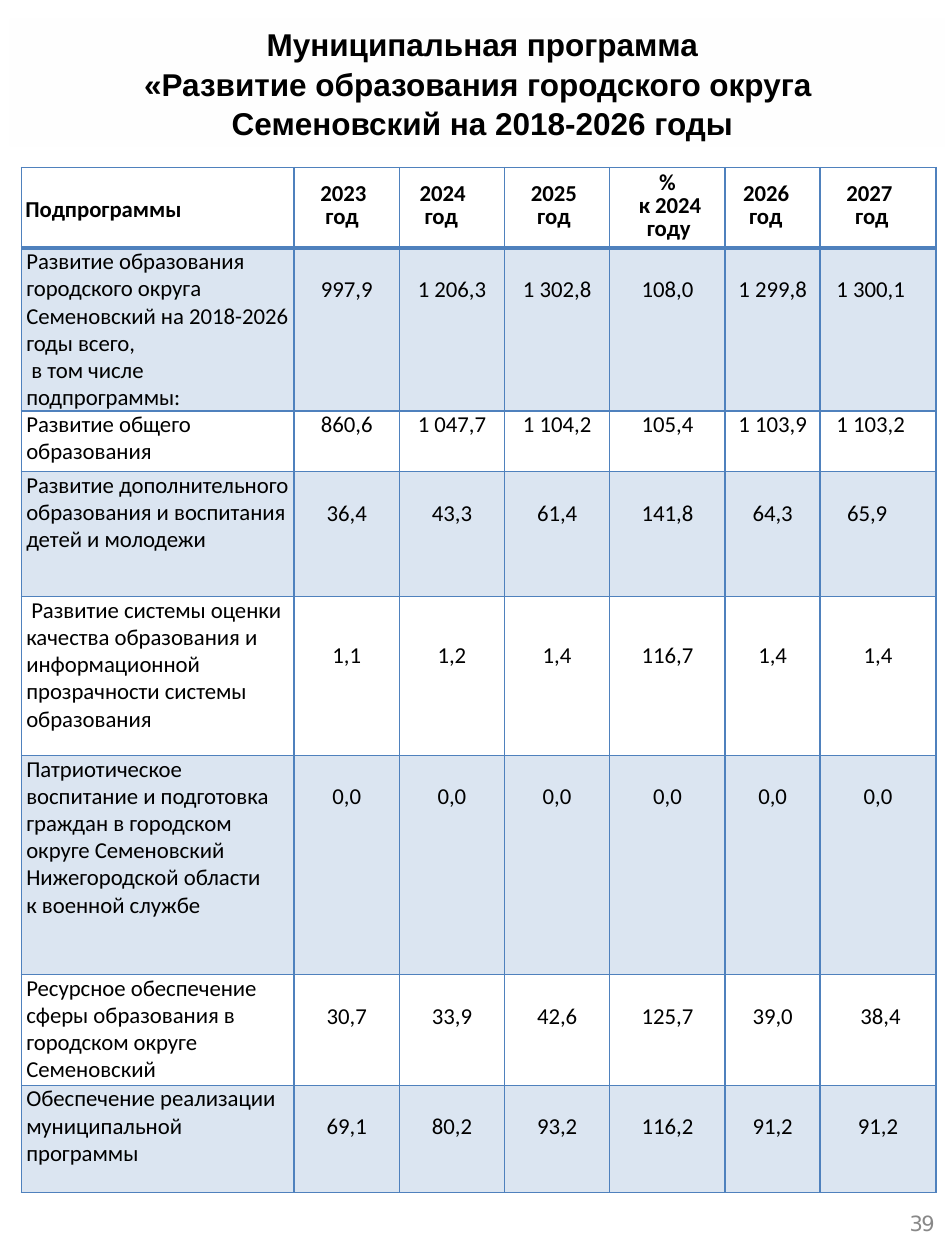
from pptx import Presentation
from pptx.dml.color import RGBColor
from pptx.enum.text import MSO_ANCHOR, PP_ALIGN
from pptx.oxml import parse_xml
from pptx.oxml.ns import nsdecls
from pptx.oxml.xmlchemy import OxmlElement
from pptx.util import Cm, Pt

BLUE = "4F81BD"
BLACK = "000000"
COLUMNS = [5.5, 2.12, 2.12, 2.12, 2.33, 1.91, 2.34]
ROWS = [1.62, 3.25, 1.22, 2.52, 3.2, 4.42, 2.23, 2.16]
TITLE = ["Муниципальная программа",
         "«Развитие образования городского округа ",
         "Семеновский на 2018-2026 годы"]
HEADERS = [
    [("Подпрограммы", 0.08)],
    [("2023", 0.53), ("год", 0.63)],
    [("2024", 0.41), ("год", 0.51)],
    [("2025", 0.53), ("год", 0.66)],
    [("%", 0), ("к 2024", 0.1), ("году", 0.05)],
    [("2026", 0.36), ("год", 0.48)],
    [("2027", 0.53), ("год", 0.71)],
]
# name paragraphs with first-line indent, top margin of values, shift of last value, values
PROGRAMS = [
    ([("Развитие образования городского округа Семеновский на 2018-2026 годы всего,", 0),
      ("в том числе подпрограммы:", 0.1)], 0.56, -0.3,
     ["997,9", "1 206,3", "1 302,8", "108,0", "1 299,8", "1 300,1"]),
    ([("Развитие общего образования", 0)], 0, -0.3,
     ["860,6", "1 047,7", "1 104,2", "105,4", "1 103,9", "1 103,2"]),
    ([("Развитие дополнительного", 0), ("образования и воспитания детей и молодежи", 0)],
     0.56, -0.44, ["36,4", "43,3", "61,4", "141,8", "64,3", "65,9"]),
    ([("Развитие системы оценки качества образования и информационной "
       "прозрачности системы образования", 0.1)], 0.92, 0,
     ["1,1", "1,2", "1,4", "116,7", "1,4", "1,4"]),
    ([("Патриотическое воспитание и подготовка граждан в городском округе Семеновский", 0),
      ("Нижегородской области", 0), ("к военной службе", 0)], 0.56, 0,
     ["0,0", "0,0", "0,0", "0,0", "0,0", "0,0"]),
    ([("Ресурсное обеспечение сферы образования в городском округе Семеновский", 0)],
     0.56, 0.1, ["30,7", "33,9", "42,6", "125,7", "39,0", "38,4"]),
    ([("Обеспечение реализации", 0), ("муниципальной программы", 0)],
     0.56, 0, ["69,1", "80,2", "93,2", "116,2", "91,2", "91,2"]),
]


def color(value):
    """Turn a hex string into a colour."""
    return RGBColor.from_string(value)


def apply(target, values):
    """Set attributes of an object from a dict."""
    for name, value in values.items():
        setattr(target, name, value)


def tint(fill, value, opacity):
    """Give a fill a colour with an opacity in percent."""
    fill.solid()
    fill.fore_color.rgb = color(value)
    alpha = OxmlElement("a:alpha")
    alpha.set("val", str(opacity * 1000))
    fill.fore_color._xFill[0].append(alpha)


def write(frame, lines, font, layout, ink=BLACK):
    """Write (text, indent, first-line indent) lines as paragraphs and return them."""
    paragraphs = []
    for index, (text, left, first) in enumerate(lines):
        para = frame.add_paragraph() if index else frame.paragraphs[0]
        span = para.add_run()
        span.text = text
        apply(span.font, font)
        span.font.color.rgb = color(ink)
        apply(para, layout)
        properties = para._p.get_or_add_pPr()
        properties.set("marL", str(Cm(left)))
        properties.set("indent", str(Cm(first)))
        paragraphs.append(para)
    return paragraphs


def border(cell, bottom=1):
    """Draw the four blue lines of a cell."""
    properties = cell._tc.get_or_add_tcPr()
    sides = [("lnL", 1), ("lnR", 1), ("lnT", 1), ("lnB", bottom)]
    for place, (side, width) in enumerate(sides):
        properties.insert(place, parse_xml(
            f'<a:{side} {nsdecls("a")} w="{Pt(width)}"><a:solidFill>'
            f'<a:srgbClr val="{BLUE}"/></a:solidFill></a:{side}>'))


def fill_cell(cell, lines, bold, layout, shaded=False, top=0, shift=0, bottom=1):
    """Write and format one table cell."""
    apply(cell, {"margin_left": Cm(max(shift, 0)), "margin_right": Cm(max(-shift, 0)),
                 "margin_top": Cm(top), "margin_bottom": 0})
    write(cell.text_frame, lines,
          {"name": "Calibri", "size": Pt(13), "bold": bold}, layout)
    if shaded:
        tint(cell.fill, BLUE, 20)
    else:
        cell.fill.background()
    border(cell, bottom)


def add_title(page):
    """Place and format the title."""
    box = page.shapes.title
    apply(box, {"left": Cm(0.2), "top": Cm(0.38), "width": Cm(19.05), "height": Cm(2.57)})
    tint(box.fill, "DCE6F2", 2)
    box.text_frame.vertical_anchor = MSO_ANCHOR.MIDDLE
    write(box.text_frame, [(line, 0, 0) for line in TITLE],
          {"name": "Arial", "size": Pt(18), "bold": True},
          {"alignment": PP_ALIGN.CENTER, "line_spacing": 1.05, "space_before": Pt(0)})


def add_programs(page):
    """Build the table of subprograms."""
    frame = page.shapes.add_table(len(ROWS), len(COLUMNS), Cm(0.43), Cm(3.38),
                                  Cm(sum(COLUMNS)), Cm(sum(ROWS)))
    table = frame.table
    apply(table, {"first_row": False, "horz_banding": False})
    for column, width in zip(table.columns, COLUMNS):
        column.width = Cm(width)
    for row, height in zip(table.rows, ROWS):
        row.height = Cm(height)
    for index, header in enumerate(HEADERS):
        cell = table.cell(0, index)
        layout = {"line_spacing": Pt(13.2)} if index else {}
        if len(header) == 3:
            layout["alignment"] = PP_ALIGN.CENTER
        fill_cell(cell, [(text, left, 0) for text, left in header], True, layout,
                  top=0 if index else 0.56, bottom=2)
        if index:
            cell.vertical_anchor = MSO_ANCHOR.MIDDLE
    for row, (names, top, shift, values) in enumerate(PROGRAMS, 1):
        shaded = row % 2 == 1
        fill_cell(table.cell(row, 0), [(text, 0.1, first) for text, first in names],
                  False, {"line_spacing": 0.98}, shaded)
        for column, value in enumerate(values, 1):
            fill_cell(table.cell(row, column), [(value, 0, 0)], False,
                      {"alignment": PP_ALIGN.CENTER}, shaded, top,
                      shift if column == len(values) else 0)


def add_page_number(page):
    """Add the page number in the lower right corner."""
    box = page.shapes.add_textbox(Cm(18.19), Cm(24.41), Cm(0.79), Cm(0.64))
    apply(box.text_frame, {"word_wrap": True, "margin_left": 0, "margin_right": 0,
                           "margin_top": 0, "margin_bottom": 0})
    number = write(box.text_frame, [("39", 0.15, 0)],
                   {"name": "DejaVu Sans", "size": Pt(12)}, {}, "888888")[0]
    number.runs[0].font._element.set("spc", "-100")


def main():
    """Build the deck."""
    deck = Presentation()
    apply(deck, {"slide_width": Cm(19.05), "slide_height": Cm(25.4)})
    page = deck.slides.add_slide(deck.slide_layouts[5])
    add_title(page)
    add_programs(page)
    add_page_number(page)
    deck.save("out.pptx")


if __name__ == "__main__":
    main()
